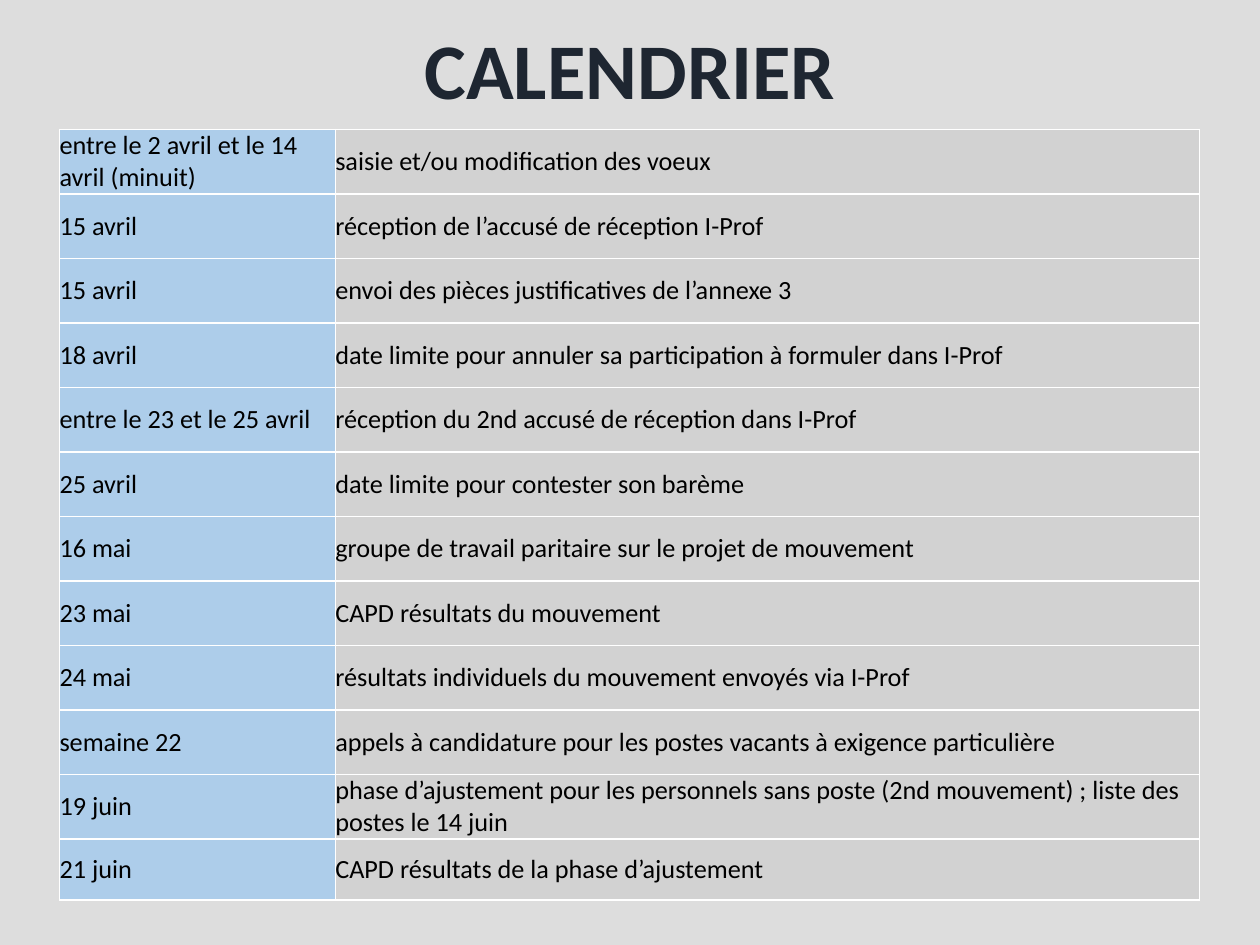
from dataclasses import dataclass

from lxml import etree
from pptx import Presentation
from pptx import util as u
from pptx.dml.color import RGBColor
from pptx.enum import text
from pptx.oxml import ns


@dataclass
class Theme:
    back: str = "DDDDDD"
    title: str = "1E2631"
    ink: str = "000000"
    date: str = "ADCDEA"
    event: str = "D2D2D2"
    line: str = "FFFFFF"
    font: str = "Calibri"
    big: int = 45
    small: int = 15


def style(para, size, color, bold):
    for run in para.runs:
        run.font.name = theme.font
        run.font.size = u.Pt(size)
        run.font.bold = bold
        run.font.color.rgb = RGBColor.from_string(color)


def border(cell):
    props = cell._tc.get_or_add_tcPr()
    for spot, side in enumerate(("lnL", "lnR", "lnT", "lnB")):
        line = etree.Element(ns.qn(f"a:{side}"), w=str(u.Pt(1)))
        fill = etree.SubElement(line, ns.qn("a:solidFill"))
        etree.SubElement(fill, ns.qn("a:srgbClr"), val=theme.line)
        props.insert(spot, line)


theme = Theme()
events = [
    ("entre le 2 avril et le 14 avril (minuit)", "saisie et/ou modification des voeux"),
    ("15 avril", "réception de l’accusé de réception I-Prof"),
    ("15 avril", "envoi des pièces justificatives de l’annexe 3"),
    ("18 avril", "date limite pour annuler sa participation à formuler dans I-Prof"),
    ("entre le 23 et le 25 avril", "réception du 2nd accusé de réception dans I-Prof"),
    ("25 avril", "date limite pour contester son barème"),
    ("16 mai", "groupe de travail paritaire sur le projet de mouvement"),
    ("23 mai", "CAPD résultats du mouvement"),
    ("24 mai", "résultats individuels du mouvement envoyés via I-Prof"),
    ("semaine 22", "appels à candidature pour les postes vacants à exigence particulière"),
    ("19 juin", "phase d’ajustement pour les personnels sans poste (2nd mouvement) ; "
                "liste des postes le 14 juin"),
    ("21 juin", "CAPD résultats de la phase d’ajustement"),
]

deck = Presentation()
deck.slide_width = u.Cm(25.4)
deck.slide_height = u.Cm(19.05)
slide = deck.slides.add_slide(deck.slide_layouts[5])
slide.background.fill.solid()
slide.background.fill.fore_color.rgb = RGBColor.from_string(theme.back)

title = slide.shapes.title
title.left, title.top = u.Cm(1.6), u.Cm(0.4)
title.width, title.height = u.Cm(22.2), u.Cm(2.08)
frame = title.text_frame
frame.text = "CALENDRIER"
frame.vertical_anchor = text.MSO_ANCHOR.BOTTOM
frame.margin_left = frame.margin_right = u.Cm(0.13)
frame.margin_top = frame.margin_bottom = u.Cm(0.13)
head = frame.paragraphs[0]
head.alignment = text.PP_ALIGN.CENTER
head.line_spacing = 0.9
style(head, theme.big, theme.title, True)

table = slide.shapes.add_table(
    len(events), 2, u.Cm(1.2), u.Cm(2.61), u.Cm(22.98), u.Cm(15.53)
).table
table.first_row = False
table.horz_banding = False
table.columns[0].width = u.Cm(5.56)
table.columns[1].width = u.Cm(17.42)
for row in table.rows:
    row.height = u.Cm(1.3)
table.rows[len(events) - 1].height = u.Cm(1.23)

for r, event in enumerate(events):
    for c, (words, color) in enumerate(zip(event, (theme.date, theme.event))):
        cell = table.cell(r, c)
        cell.text_frame.text = words
        cell.vertical_anchor = text.MSO_ANCHOR.MIDDLE
        cell.margin_left = cell.margin_right = 0
        cell.margin_top = cell.margin_bottom = 0
        cell.fill.solid()
        cell.fill.fore_color.rgb = RGBColor.from_string(color)
        border(cell)
        style(cell.text_frame.paragraphs[0], theme.small, theme.ink, False)

deck.save("out.pptx")
